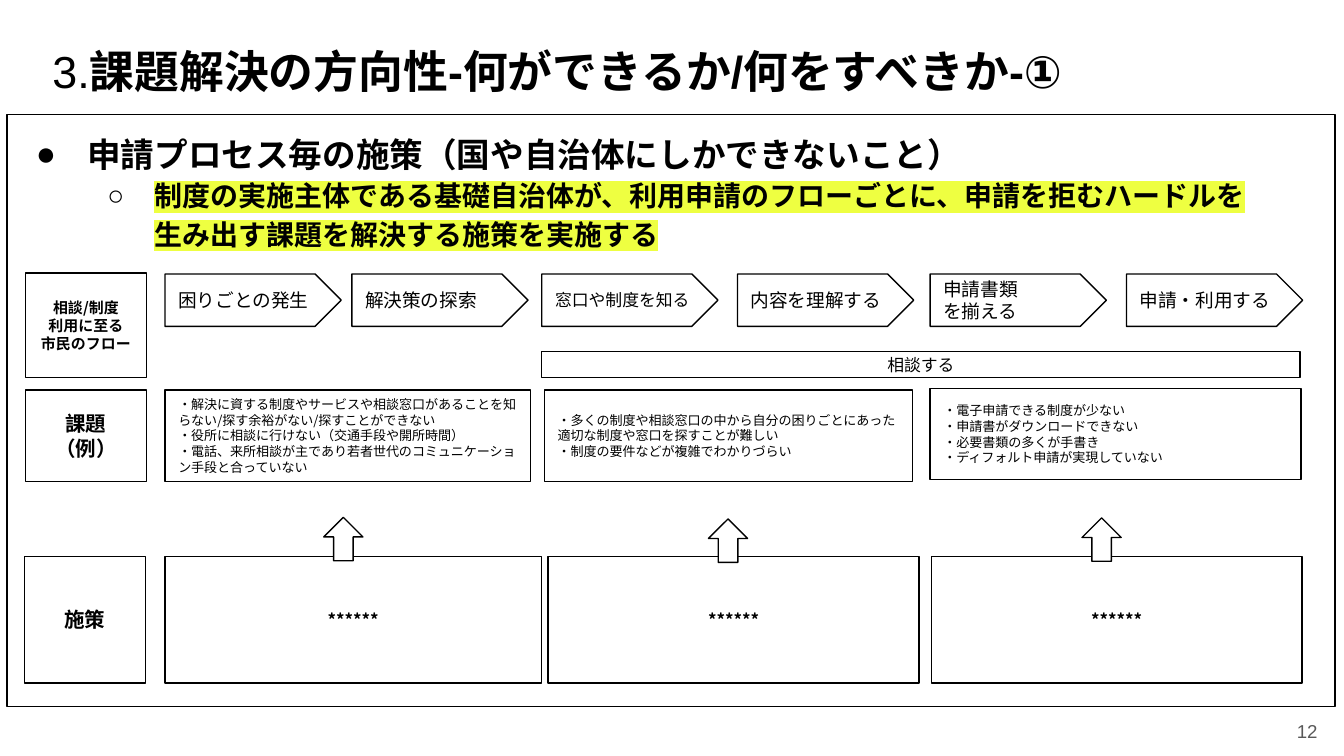
from lxml import etree
from pptx import Presentation
from pptx import util as u
from pptx.dml.color import RGBColor
from pptx.enum import shapes, text
from pptx.oxml import ns

BLACK, WHITE, GREY, YELLOW = "000000", "FFFFFF", "595959", "EEFF41"
CJK, ARIAL = "Noto Sans CJK JP", "Arial"
LEFT, CENTER = text.PP_ALIGN.LEFT, text.PP_ALIGN.CENTER
TOP, MIDDLE = text.MSO_ANCHOR.TOP, text.MSO_ANCHOR.MIDDLE
SHAPE = shapes.MSO_SHAPE


def color(value):
    return RGBColor.from_string(value)


def place(box):
    return [u.Cm(v) for v in box]


def add_run(p, words, size, font=CJK, bold=False, ink=BLACK, mark=None):
    for i, line in enumerate(words.split("\n")):
        if i:
            p.add_line_break()
        r = p.add_run()
        r.text = line
        r.font.size = u.Pt(size)
        r.font.bold = bold
        r.font.color.rgb = color(ink)
        r.font.name = font
        rpr = r.font._element
        latin = rpr.find(ns.qn("a:latin"))
        ea = etree.Element(ns.qn("a:ea"), typeface=font)
        latin.addnext(ea)
        if mark:
            hl = etree.Element(ns.qn("a:highlight"))
            etree.SubElement(hl, ns.qn("a:srgbClr"), val=mark)
            rpr.find(ns.qn("a:solidFill")).addnext(hl)


def set_frame(tf, anchor=MIDDLE, inset=0.25):
    tf.word_wrap = True
    tf.auto_size = text.MSO_AUTO_SIZE.NONE
    tf.vertical_anchor = anchor
    tf.margin_left = tf.margin_right = u.Cm(inset)
    tf.margin_top = tf.margin_bottom = u.Cm(inset)


def add_box(s, kind, box, lines=(), size=10, bold=False, align=LEFT, anchor=MIDDLE):
    sp = s.shapes.add_shape(kind, *place(box))
    sp.shadow.inherit = False
    sp.fill.solid()
    sp.fill.fore_color.rgb = color(WHITE)
    sp.line.color.rgb = color(BLACK)
    sp.line.width = u.Pt(0.75)
    tf = sp.text_frame
    set_frame(tf, anchor)
    for i, line in enumerate(lines):
        p = tf.add_paragraph() if i else tf.paragraphs[0]
        p.alignment = align
        add_run(p, line, size, bold=bold)
    return sp


def add_bullet(p, char, margin, indent):
    ppr = p._p.get_or_add_pPr()
    ppr.set("marL", str(u.Cm(margin)))
    ppr.set("indent", str(u.Cm(indent)))
    clr = etree.SubElement(ppr, ns.qn("a:buClr"))
    etree.SubElement(clr, ns.qn("a:srgbClr"), val=BLACK)
    etree.SubElement(ppr, ns.qn("a:buFont"), typeface=ARIAL)
    etree.SubElement(ppr, ns.qn("a:buChar"), char=char)
    p.alignment = LEFT
    p.line_spacing = 1.15


def add_title(s, box):
    sp = s.shapes.title
    sp.left, sp.top, sp.width, sp.height = place(box)
    set_frame(sp.text_frame, TOP)
    p = sp.text_frame.paragraphs[0]
    p.alignment = LEFT
    add_run(p, "3.", 24, ARIAL)
    add_run(p, "課題解決の方向性-何ができるか/何をすべきか-①", 24, ARIAL, True)


def add_body(s, box):
    tf = add_box(s, SHAPE.RECTANGLE, box, anchor=TOP).text_frame
    p = tf.paragraphs[0]
    add_bullet(p, "●", 1.27, -0.97)
    add_run(p, "申請プロセス毎の施策（国や自治体にしかできないこと）", 18, ARIAL, True)
    p = tf.add_paragraph()
    p.level = 1
    add_bullet(p, "○", 2.54, -0.89)
    add_run(p, "制度の実施主体である基礎自治体が、利用申請のフローごとに、申請を拒むハードルを\n"
            "生み出す課題を解決する施策を実施する", 15, ARIAL, True, mark=YELLOW)


def add_flow(s, box):
    x, y, w, h = box
    add_box(s, SHAPE.RECTANGLE, (x, y, 2.29, h),
            ["相談/制度", "利用に至る\n市民のフロー"], 8, True, CENTER)
    steps = [
        (2.64, 10, ["困りごとの発生"]),
        (6.17, 10, ["解決策の探索"]),
        (9.76, 9, ["窓口や制度を知る"]),
        (13.46, 10, ["内容を理解する"]),
        (17.1, 10, ["申請書類", "を揃える"]),
        (20.81, 10, ["申請・利用する"]),
    ]
    for dx, size, lines in steps:
        add_box(s, SHAPE.PENTAGON, (x + dx, y + 0.02, 3.33, 0.99), lines, size)
    add_box(s, SHAPE.RECTANGLE, (x + 9.76, y + h - 0.49, w - 9.76, 0.49),
            ["相談する"], 9, align=CENTER)


def add_issues(s, box):
    x, y, w, h = box
    add_box(s, SHAPE.RECTANGLE, (x, y, 2.29, h), ["課題（例）"], 11, True, CENTER)
    cells = [
        (2.64, 0, 6.91, [
            "・解決に資する制度やサービスや相談窓口があることを知らない/探す余裕がない/探すことができない",
            "・役所に相談に行けない（交通手段や開所時間）",
            "・電話、来所相談が主であり若者世代のコミュニケーション手段と合っていない"]),
        (9.81, 0, 6.96, [
            "・多くの制度や相談窓口の中から自分の困りごとにあった適切な制度や窓口を探すことが難しい",
            "・制度の要件などが複雑でわかりづらい"]),
        (17.1, -0.03, w - 17.1, [
            "・電子申請できる制度が少ない",
            "・申請書がダウンロードできない",
            "・必要書類の多くが手書き",
            "・ディフォルト申請が実現していない"]),
    ]
    for dx, dy, width, lines in cells:
        add_box(s, SHAPE.RECTANGLE, (x + dx, y + dy, width, h), lines, 7)


def add_measures(s, box):
    x, y, w, h = box
    add_box(s, SHAPE.RECTANGLE, (x, y, 2.29, h), ["施策"], 11, True, CENTER)
    cells = [(2.66, 7.11, 5.66, -0.74), (9.9, 7.01, 12.93, -0.71),
             (17.14, w - 17.14, 19.99, -0.73)]
    for dx, width, arrow_dx, arrow_dy in cells:
        add_box(s, SHAPE.RECTANGLE, (x + dx, y, width, h), ["******"], 9, True, CENTER)
        add_box(s, SHAPE.UP_ARROW, (x + arrow_dx, y + arrow_dy, 0.74, 0.82))


def add_page_number(s, box):
    tf = s.shapes.add_textbox(*place(box)).text_frame
    set_frame(tf, inset=0.1)
    p = tf.paragraphs[0]
    p.alignment = CENTER
    add_run(p, "12", 10, ARIAL, ink=GREY)


def main():
    prs = Presentation()
    prs.slide_width, prs.slide_height = u.Cm(25.4), u.Cm(14.29)
    s = prs.slides.add_slide(prs.slide_layouts[5])
    add_title(s, (0.74, 0.58, 23.67, 1.6))
    add_body(s, (0.13, 2.16, 25.1, 11.2))
    add_flow(s, (0.48, 5.16, 24.09, 1.98))
    add_issues(s, (0.48, 7.37, 24.11, 1.73))
    add_measures(s, (0.46, 10.52, 24.15, 2.39))
    add_page_number(s, (24.16, 13.51, 1.09, 0.61))
    prs.save("out.pptx")


if __name__ == "__main__":
    main()
